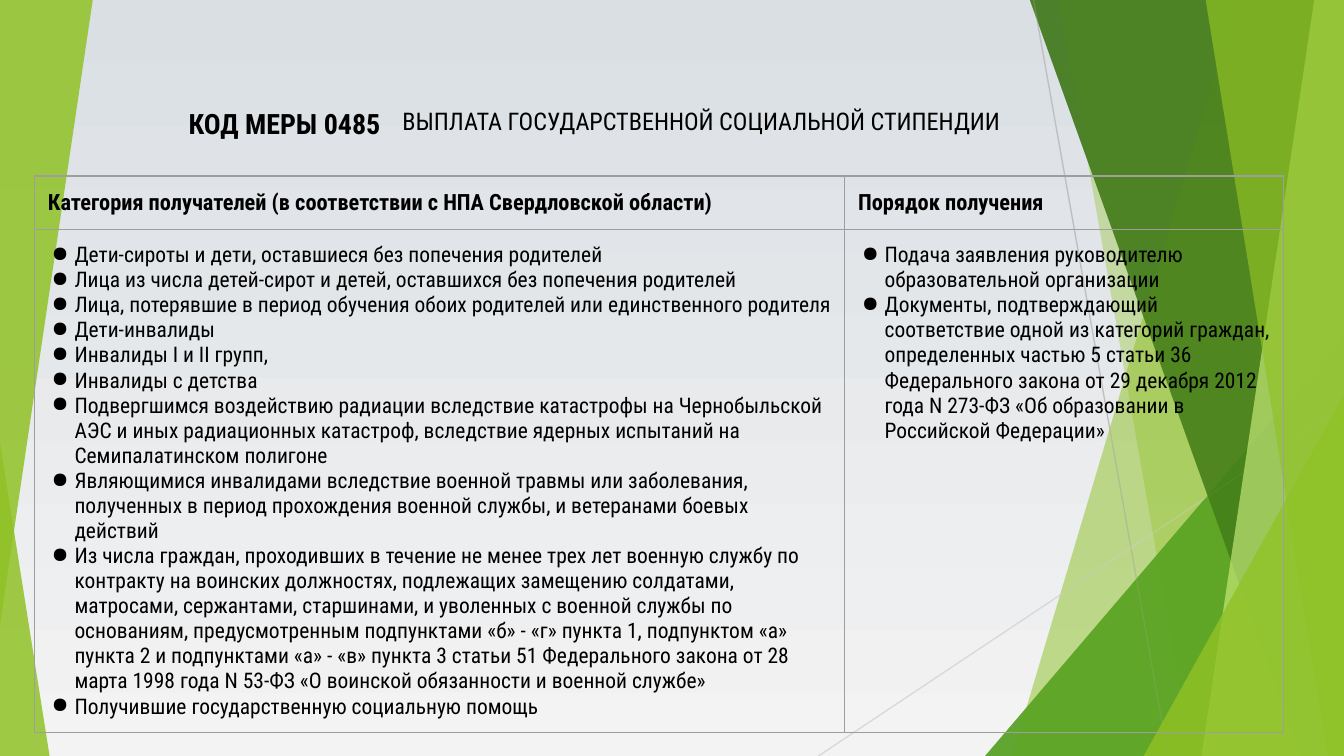
import pptx
import pptx.util
from lxml import etree
from pptx.dml.color import RGBColor
from pptx.enum.shapes import MSO_CONNECTOR, MSO_SHAPE
from pptx.enum.text import MSO_ANCHOR, MSO_AUTO_SIZE, PP_ALIGN
from pptx.oxml.ns import qn

Pt = pptx.util.Pt
FONT = "Roboto Condensed"
BLACK = RGBColor(0x00, 0x00, 0x00)
GREEN = RGBColor(0x90, 0xC2, 0x26)
MID_GREEN = RGBColor(0x54, 0xA0, 0x21)
DARK_GREEN = RGBColor(0x3F, 0x78, 0x19)
LIGHT_GREEN = RGBColor(0xC0, 0xE4, 0x74)
GRAY = RGBColor(0xBF, 0xBF, 0xBF)
PALE_GRAY = RGBColor(0xD9, 0xD9, 0xD9)
BORDER = RGBColor(0x9E, 0x9E, 0x9E)
BG_TOP = RGBColor(0xDA, 0xDF, 0xE4)
BG_BOTTOM = RGBColor(0xF3, 0xF3, 0xF3)
WIDTH, HEIGHT, TOP = 720, 405, -0.7

CODE = "КОД МЕРЫ 0485"
TITLE = "ВЫПЛАТА ГОСУДАРСТВЕННОЙ СОЦИАЛЬНОЙ СТИПЕНДИИ"
COLUMNS = [
    ("Категория получателей (в соответствии с НПА Свердловской области)", 434, [
        "Дети-сироты и дети, оставшиеся без попечения родителей",
        "Лица из числа детей-сирот и детей, оставшихся без попечения родителей",
        "Лица, потерявшие в период обучения обоих родителей или единственного родителя",
        "Дети-инвалиды",
        "Инвалиды I и II групп,",
        "Инвалиды с детства",
        "Подвергшимся воздействию радиации вследствие катастрофы на Чернобыльской АЭС "
        "и иных радиационных катастроф, вследствие ядерных испытаний на "
        "Семипалатинском полигоне",
        "Являющимися инвалидами вследствие военной травмы или заболевания, полученных "
        "в период прохождения военной службы, и ветеранами боевых действий",
        "Из числа граждан, проходивших в течение не менее трех лет военную службу по "
        "контракту на воинских должностях, подлежащих замещению солдатами, матросами, "
        "сержантами, старшинами, и уволенных с военной службы по основаниям, "
        "предусмотренным подпунктами «б» - «г» пункта 1, подпунктом «а» пункта 2 и "
        "подпунктами «а» - «в» пункта 3 статьи 51 Федерального закона от 28 марта "
        "1998 года N 53-ФЗ «О воинской обязанности и военной службе»",
        "Получившие государственную социальную помощь",
    ]),
    ("Порядок получения", 235, [
        "Подача заявления руководителю образовательной организации",
        "Документы, подтверждающий соответствие одной из категорий граждан, "
        "определенных частью 5 статьи 36 Федерального закона от 29 декабря 2012 года "
        "N 273-ФЗ «Об образовании в Российской Федерации»",
    ]),
]
ROW_HEIGHTS = (27.5, 262.5)

# Bands reach the right edge: (left x at the top, left x at the bottom, colour, opacity %)
BACK_BANDS = [(663.2, 542.2, GREEN, 30), (567.4, 638.6, GREEN, 20)]
FRONT_BANDS = [(551.5, 697, DARK_GREEN, 70), (704.2, 643.7, LIGHT_GREEN, 70),
               (645.8, 711.4, GREEN, 65)]
# Triangles: (left, top, width, height, apex, rotation, colour, opacity %)
MID_TRIANGLE = (527.8, 180, 192.2, 225, 1, 0, MID_GREEN, 72)
CORNER_TRIANGLE = (612.7, 211.7, 107.3, 193.3, 1, 0, GREEN, 80)
LOWER_LEFT = (0, 237, 26.6, 168, 0, 0, GREEN, 85)
UPPER_LEFT = (0, 0, 49.7, 334.8, 1, 180, GREEN, 85)
LINES = [((553.7, 0), (625.7, HEIGHT), GRAY), ((WIDTH, 217.4), (438.5, HEIGHT), PALE_GRAY)]


def set_alpha(color_parent, percent):
    color = color_parent.find(".//" + qn("a:srgbClr"))
    etree.SubElement(color, qn("a:alpha"), val=str(percent * 1000))


def paint(shape, color, opacity):
    shape.shadow.inherit = False
    shape.line.fill.background()
    shape.fill.solid()
    shape.fill.fore_color.rgb = color
    set_alpha(shape.element.spPr.find(qn("a:solidFill")), opacity)


def add_band(s, x_top, x_bottom, color, opacity):
    points = [(x_top, TOP), (WIDTH, TOP), (WIDTH, HEIGHT), (x_bottom, HEIGHT)]
    points = [(Pt(x), Pt(y)) for x, y in points]
    builder = s.shapes.build_freeform(*points[0])
    builder.add_line_segments(points[1:], close=True)
    paint(builder.convert_to_shape(), color, opacity)


def add_triangle(s, left, top, width, height, apex, rotation, color, opacity):
    sp = s.shapes.add_shape(MSO_SHAPE.ISOSCELES_TRIANGLE,
                            Pt(left), Pt(top), Pt(width), Pt(height))
    sp.adjustments[0] = apex
    sp.rotation = rotation
    paint(sp, color, opacity)


def add_decor(s, left_triangle):
    for band in BACK_BANDS:
        add_band(s, *band)
    add_triangle(s, *MID_TRIANGLE)
    for band in FRONT_BANDS:
        add_band(s, *band)
    add_triangle(s, *CORNER_TRIANGLE)
    add_triangle(s, *left_triangle)


def add_line(s, start, end, color):
    line = s.shapes.add_connector(MSO_CONNECTOR.STRAIGHT, *map(Pt, start + end))
    line.line.color.rgb = color
    line.line.width = Pt(0.75)
    etree.SubElement(line.element.spPr, qn("a:effectLst"))


def format_runs(p, size, bold):
    for r in p.runs:
        r.font.name, r.font.size, r.font.bold = FONT, Pt(size), bold
        r.font.color.rgb = BLACK


def add_bullet(p):
    pPr = p._p.get_or_add_pPr()
    pPr.set("marL", str(Pt(14.2)))
    pPr.set("indent", str(-Pt(12.2)))
    color = etree.SubElement(pPr, qn("a:buClr"))
    etree.SubElement(color, qn("a:srgbClr"), val=str(BLACK))
    etree.SubElement(pPr, qn("a:buChar"), char="●")


def set_margins(target, horizontal, vertical):
    target.margin_left = target.margin_right = Pt(horizontal)
    target.margin_top = target.margin_bottom = Pt(vertical)


def format_cell(cell):
    set_margins(cell, 7.2, 7.2)
    cell.fill.background()
    tcPr = cell._tc.get_or_add_tcPr()
    for i, side in enumerate(("a:lnL", "a:lnR", "a:lnT", "a:lnB")):
        ln = etree.Element(qn(side), w=str(Pt(0.75)))
        fill = etree.SubElement(ln, qn("a:solidFill"))
        etree.SubElement(fill, qn("a:srgbClr"), val=str(BORDER))
        tcPr.insert(i, ln)


def add_measure_table(s):
    frame = s.shapes.add_table(2, len(COLUMNS), Pt(18.5), Pt(94.3),
                               Pt(sum(c[1] for c in COLUMNS)), Pt(sum(ROW_HEIGHTS)))
    table = frame.table
    table.first_row = table.horz_banding = False
    for row, height in zip(table.rows, ROW_HEIGHTS):
        row.height = Pt(height)
    for i, (heading, width, items) in enumerate(COLUMNS):
        table.columns[i].width = Pt(width)
        head, body = table.cell(0, i), table.cell(1, i)
        head.text_frame.text = heading
        format_runs(head.text_frame.paragraphs[0], 12, True)
        body.text_frame.text = "\n".join(items)
        for p in body.text_frame.paragraphs:
            add_bullet(p)
            format_runs(p, 11.5, False)
        format_cell(head)
        format_cell(body)


def place_label(sp, text, left, width, size, bold, align, margins):
    sp.left, sp.top, sp.width, sp.height = Pt(left), Pt(38.2), Pt(width), Pt(55.4)
    tf = sp.text_frame
    tf.text = text
    tf.word_wrap = True
    tf.auto_size = MSO_AUTO_SIZE.NONE
    tf.vertical_anchor = MSO_ANCHOR.MIDDLE
    set_margins(tf, *margins)
    p = tf.paragraphs[0]
    p.alignment = align
    format_runs(p, size, bold)
    return p


def main():
    prs = pptx.Presentation()
    prs.slide_width, prs.slide_height = Pt(WIDTH), Pt(HEIGHT)
    s = prs.slides.add_slide(prs.slide_layouts[5])

    fill = s.background.fill
    fill.gradient()
    fill.gradient_angle = 270
    for stop, color in zip(fill.gradient_stops, (BG_TOP, BG_BOTTOM)):
        stop.color.rgb = color
    set_alpha(s.background._cSld.bg, 60)

    add_decor(s, LOWER_LEFT)
    for line in LINES:
        add_line(s, *line)
    add_decor(s, UPPER_LEFT)
    add_measure_table(s)

    title = s.shapes.title
    title.element.getparent().append(title.element)
    p = place_label(title, TITLE, 210.2, 453.6, 13, False, PP_ALIGN.LEFT, (5.4, 2.7))
    p.line_spacing = 0.9
    code = s.shapes.add_textbox(0, 0, 0, 0)
    place_label(code, CODE, 59, 152, 15, True, PP_ALIGN.RIGHT, (7.2, 7.2))

    prs.save("out.pptx")


if __name__ == "__main__":
    main()
